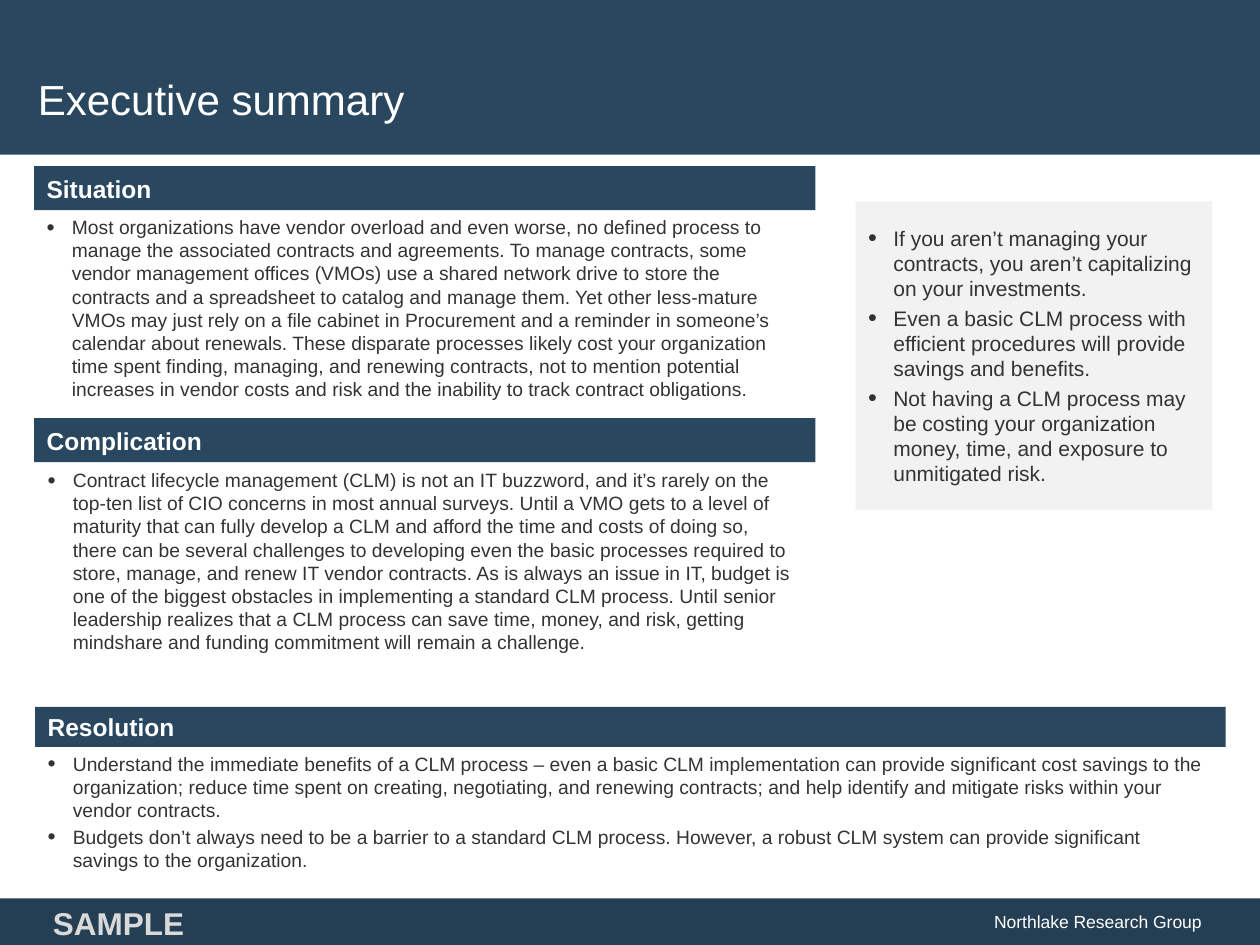
from dataclasses import dataclass

from lxml import etree
from pptx import Presentation
from pptx import util as u
from pptx.dml.color import RGBColor
from pptx.enum import shapes, text
from pptx.oxml import ns

NAVY, FOOTER_NAVY, WHITE = "29475F", "243F54", "FFFFFF"
BODY_GREY, PANEL_GREY, LABEL_GREY = "333333", "F2F2F2", "D9D9D9"
INDENT = u.Cm(0.51)


@dataclass(frozen=True)
class Box:
    left: float
    top: float
    width: float
    height: float

    def lengths(self) -> list[u.Length]:
        return [u.Cm(v) for v in (self.left, self.top, self.width, self.height)]


@dataclass(frozen=True)
class Section:
    heading: str
    bar: Box
    body: Box
    points: list[str]


SECTIONS = [
    Section("Situation", Box(0.69, 3.35, 15.75, 0.89), Box(0.69, 4.22, 15.54, 4.67), [
        "Most organizations have vendor overload and even worse, no defined process to manage "
        "the associated contracts and agreements. To manage contracts, some vendor management "
        "offices (VMOs) use a shared network drive to store the contracts and a spreadsheet to "
        "catalog and manage them. Yet other less-mature VMOs may just rely on a file cabinet in "
        "Procurement and a reminder in someone’s calendar about renewals. These disparate "
        "processes likely cost your organization time spent finding, managing, and renewing "
        "contracts, not to mention potential increases in vendor costs and risk and the "
        "inability to track contract obligations.",
    ]),
    Section("Complication", Box(0.69, 8.43, 15.75, 0.89), Box(0.71, 9.32, 15.52, 4.39), [
        "Contract lifecycle management (CLM) is not an IT buzzword, and it’s rarely on the "
        "top-ten list of CIO concerns in most annual surveys. Until a VMO gets to a level of "
        "maturity that can fully develop a CLM and afford the time and costs of doing so, there "
        "can be several challenges to developing even the basic processes required to store, "
        "manage, and renew IT vendor contracts. As is always an issue in IT, budget is one of "
        "the biggest obstacles in implementing a standard CLM process. Until senior leadership "
        "realizes that a CLM process can save time, money, and risk, getting mindshare and "
        "funding commitment will remain a challenge.",
    ]),
    Section("Resolution", Box(0.71, 14.25, 24, 0.81), Box(0.71, 15.04, 23.95, 2.74), [
        "Understand the immediate benefits of a CLM process – even a basic CLM implementation "
        "can provide significant cost savings to the organization; reduce time spent on "
        "creating, negotiating, and renewing contracts; and help identify and mitigate risks "
        "within your vendor contracts.",
        "Budgets don’t always need to be a barrier to a standard CLM process. However, a robust "
        "CLM system can provide significant savings to the organization.",
    ]),
]

INSIGHTS = [
    "If you aren’t managing your contracts, you aren’t capitalizing on your investments.",
    "Even a basic CLM process with efficient procedures will provide savings and benefits.",
    "Not having a CLM process may be costing your organization money, time, and exposure to "
    "unmitigated risk.",
]


def rgb(color: str) -> RGBColor:
    return RGBColor.from_string(color)


def add_bar(slide, box: Box, color: str):
    bar = slide.shapes.add_shape(shapes.MSO_SHAPE.RECTANGLE, *box.lengths())
    bar.shadow.inherit = False
    bar.fill.solid()
    bar.fill.fore_color.rgb = rgb(color)
    bar.line.fill.background()
    return bar


def write(holder, lines: list[str], size: float, color: str, bold: bool = False,
          align=text.PP_ALIGN.LEFT, anchor=text.MSO_ANCHOR.MIDDLE) -> None:
    frame = holder.text_frame
    frame.word_wrap = True
    frame.auto_size = text.MSO_AUTO_SIZE.NONE
    frame.vertical_anchor = anchor
    frame.text = "\n".join(lines)
    for paragraph in frame.paragraphs:
        paragraph.alignment = align
        paragraph.font.name = "Arial"
        paragraph.font.size = u.Pt(size)
        paragraph.font.bold = bold
        paragraph.font.color.rgb = rgb(color)


def write_bullets(holder, points: list[str], size: float, anchor) -> None:
    write(holder, points, size, BODY_GREY, anchor=anchor)
    for paragraph in holder.text_frame.paragraphs:
        paragraph.space_before = u.Pt(size * 0.2)
        properties = paragraph._p.get_or_add_pPr()
        properties.set("marL", str(INDENT))
        properties.set("indent", str(-INDENT))
        bullet_color = etree.Element(ns.qn("a:buClr"))
        etree.SubElement(bullet_color, ns.qn("a:srgbClr"), val=BODY_GREY)
        bullet_parts = [
            bullet_color,
            etree.Element(ns.qn("a:buSzPct"), val="120000"),
            etree.Element(ns.qn("a:buFont"), typeface="Arial"),
            etree.Element(ns.qn("a:buChar"), char="•"),
        ]
        defaults = properties.find(ns.qn("a:defRPr"))
        for part in bullet_parts:
            defaults.addprevious(part)


def add_section(slide, section: Section) -> None:
    write(add_bar(slide, section.bar, NAVY), [section.heading], 14, WHITE, bold=True)
    body = slide.shapes.add_textbox(*section.body.lengths())
    write_bullets(body, section.points, 11, text.MSO_ANCHOR.TOP)


def add_title(slide, box: Box, wording: str) -> None:
    title = slide.shapes.title
    title.left, title.top, title.width, title.height = box.lengths()
    write(title, [wording], 24, WHITE)
    slide.shapes._spTree.append(title._element)


def add_footer(slide) -> None:
    footer = add_bar(slide, Box(0, 18.11, 25.4, 0.94), FOOTER_NAVY)
    write(footer, ["Northlake Research Group"], 10, WHITE, align=text.PP_ALIGN.RIGHT)
    footer.text_frame.margin_right = u.Cm(1.18)
    label = slide.shapes.add_textbox(*Box(0.69, 18.31, 3.4, 0.61).lengths())
    write(label, ["SAMPLE"], 18, LABEL_GREY, bold=True, align=text.PP_ALIGN.CENTER)


def main() -> None:
    deck = Presentation()
    deck.slide_width, deck.slide_height = u.Cm(25.4), u.Cm(19.05)
    slide = deck.slides.add_slide(deck.slide_layouts[5])
    add_bar(slide, Box(0, 0, 25.4, 3.12), NAVY)
    add_title(slide, Box(0.51, 0.76, 23.95, 2.44), "Executive summary")
    for section in SECTIONS:
        add_section(slide, section)
    insight_panel = add_bar(slide, Box(17.25, 4.06, 7.19, 6.22), PANEL_GREY)
    write_bullets(insight_panel, INSIGHTS, 12, text.MSO_ANCHOR.MIDDLE)
    add_footer(slide)
    deck.save("out.pptx")


if __name__ == "__main__":
    main()
